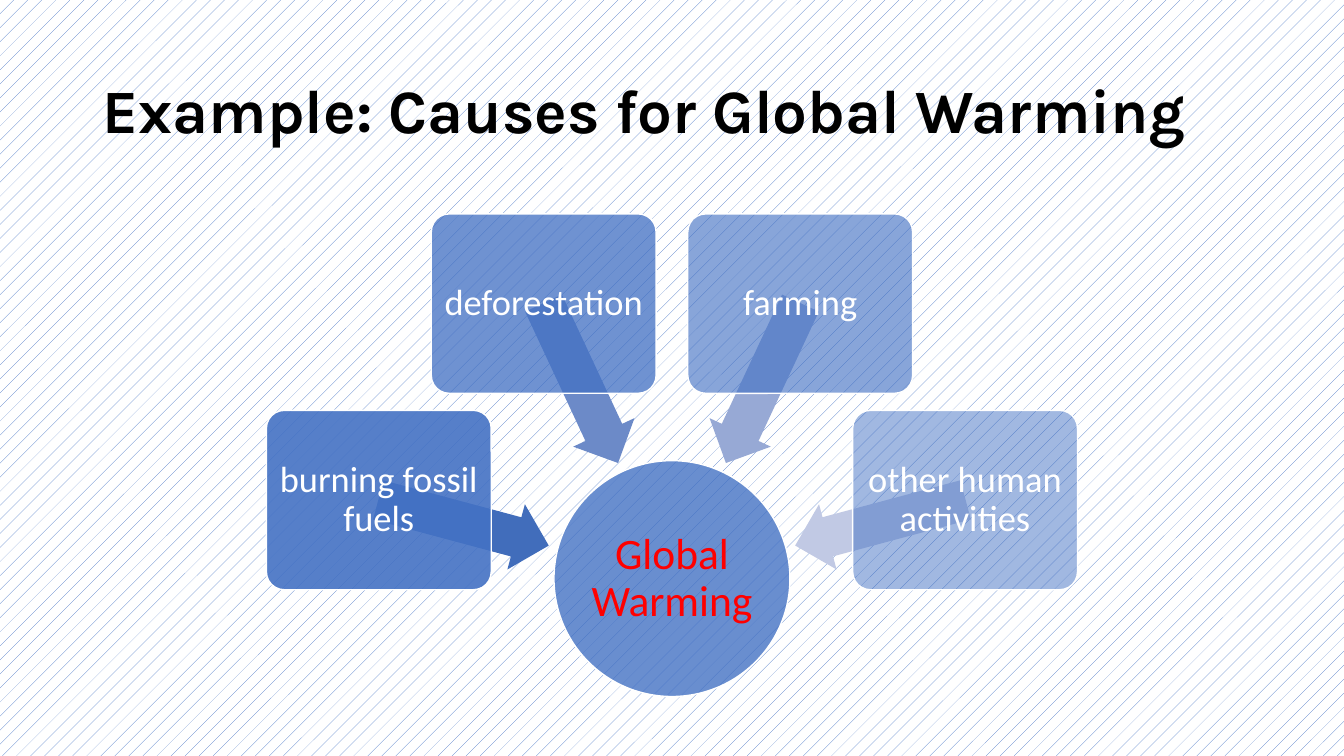
import math

import pptx
import pptx.util
import pptx.dml.color
import pptx.enum.dml
import pptx.enum.shapes
import pptx.enum.text
import pptx.oxml.ns
from lxml import etree

HEADING = "Example: Causes for Global Warming"
EFFECT = "Global Warming"
CAUSES = [
    ("burning fossil fuels", 90, "416DBB"),
    ("deforestation", 77, "6C8AC8"),
    ("farming", 63, "97A9D5"),
    ("other human activities", 50, "C1C9E4"),
]
BLUE, WHITE, BLACK, RED = "4472C4", "FFFFFF", "000000", "FF0000"

WIDTH, HEIGHT = 13.33, 7.5
HUB = (WIDTH / 2, 5.74)
HUB_SIZE = (2.34, 2.34)
CAUSE_SIZE = (2.23, 1.78)
ARROW_SIZE = (1.75, 0.67)
CAUSE_RADIUS, ARROW_RADIUS = 3.01, 2.14
FIRST_ANGLE, ANGLE_STEP = 195, 50

SHAPES = pptx.enum.shapes.MSO_SHAPE
inches = pptx.util.Inches


def color(value):
    return pptx.dml.color.RGBColor.from_string(value)


def write(shape, text, font, size, ink, inset, centred=True, bold=False):
    frame = shape.text_frame
    frame.text = text
    frame.word_wrap = True
    frame.vertical_anchor = pptx.enum.text.MSO_ANCHOR.MIDDLE
    frame.margin_left = frame.margin_right = inches(inset)
    frame.margin_top = frame.margin_bottom = inches(inset)
    paragraph = frame.paragraphs[0]
    paragraph.line_spacing = 0.9
    align = pptx.enum.text.PP_ALIGN
    paragraph.alignment = align.CENTER if centred else align.LEFT
    run_font = paragraph.runs[0].font
    run_font.name = font
    run_font.size = pptx.util.Pt(size)
    run_font.bold = bold
    run_font.color.rgb = color(ink)


def add_centred(kind, center, size, fill, opacity=100, outlined=True):
    left, top = (c - s / 2 for c, s in zip(center, size))
    shape = slide.shapes.add_shape(kind, *map(inches, (left, top, *size)))
    shape.shadow.inherit = False
    shape.fill.solid()
    shape.fill.fore_color.rgb = color(fill)
    if opacity < 100:
        fill_color = shape.fill._xPr.find(".//" + pptx.oxml.ns.qn("a:srgbClr"))
        alpha = etree.SubElement(fill_color, pptx.oxml.ns.qn("a:alpha"))
        alpha.set("val", str(opacity * 1000))
    if outlined:
        shape.line.color.rgb = color(WHITE)
        shape.line.width = pptx.util.Pt(1)
    else:
        shape.line.fill.background()
    return shape


def around_hub(angle, radius):
    turn = math.radians(angle)
    return HUB[0] + radius * math.cos(turn), HUB[1] + radius * math.sin(turn)


deck = pptx.Presentation()
deck.slide_width, deck.slide_height = inches(WIDTH), inches(HEIGHT)
slide = deck.slides.add_slide(deck.slide_layouts[6])

backdrop = slide.background.fill
backdrop.patterned()
backdrop.pattern = pptx.enum.dml.MSO_PATTERN.PERCENT_5
backdrop.fore_color.rgb = color(BLUE)
backdrop.back_color.rgb = color(WHITE)

heading = slide.shapes.add_textbox(*map(inches, (0.92, 0.4, 11.5, 1.45)))
write(heading, HEADING, "Karla", 44, BLACK, 0.1, centred=False, bold=True)

hub = add_centred(SHAPES.OVAL, HUB, HUB_SIZE, BLUE, 80)
write(hub, EFFECT, "Calibri", 31, RED, 0.02)

for index, (cause, opacity, arrow_fill) in enumerate(CAUSES):
    angle = FIRST_ANGLE + index * ANGLE_STEP
    arrow = add_centred(SHAPES.LEFT_ARROW, around_hub(angle, ARROW_RADIUS),
                        ARROW_SIZE, arrow_fill, outlined=False)
    arrow.adjustments[0], arrow.adjustments[1] = 0.6, 0.5
    arrow.rotation = angle
    box = add_centred(SHAPES.ROUNDED_RECTANGLE, around_hub(angle, CAUSE_RADIUS),
                      CAUSE_SIZE, BLUE, opacity)
    box.adjustments[0] = 0.1
    write(box, cause, "Calibri", 26, WHITE, 0.05)

deck.save("out.pptx")
